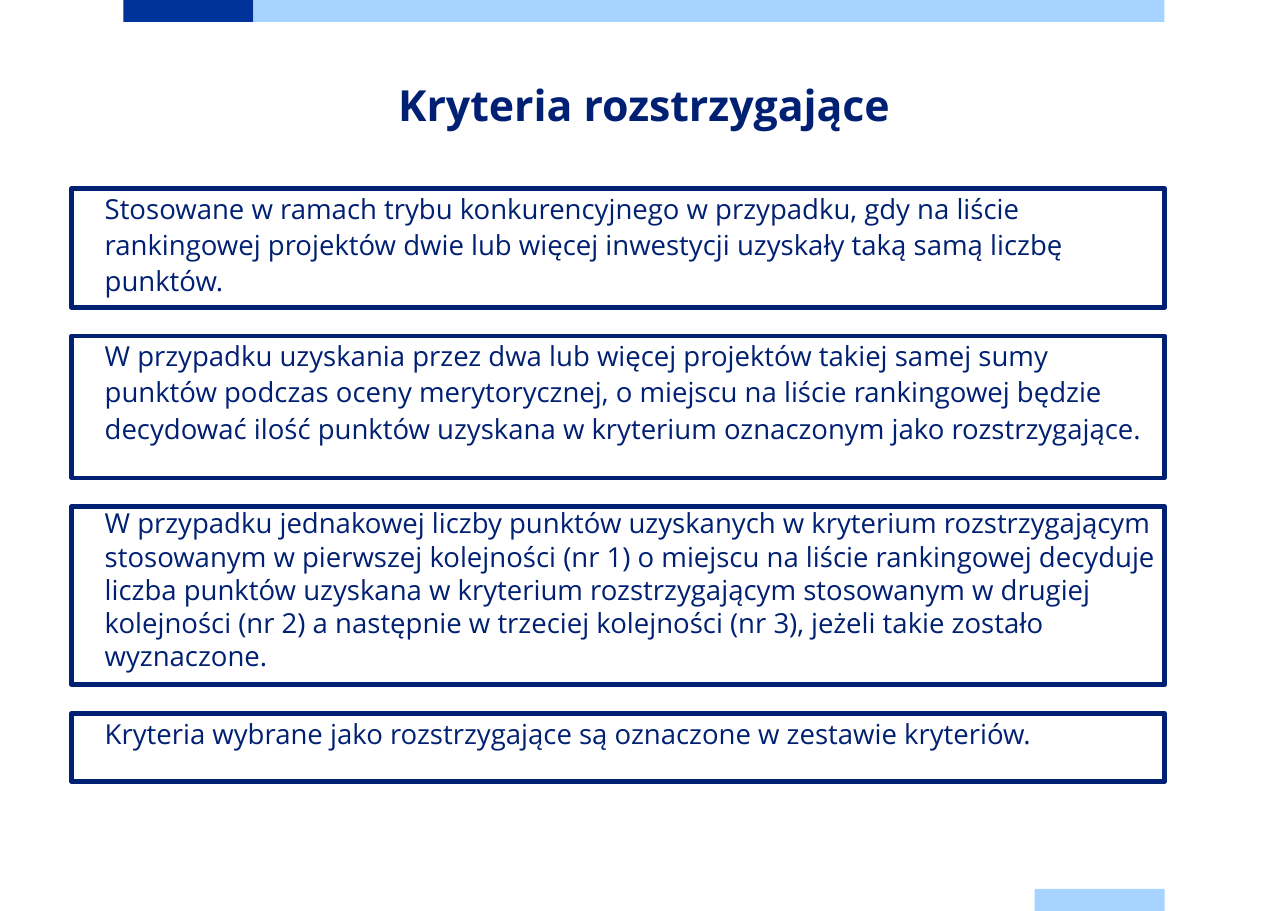
from dataclasses import dataclass

from lxml import etree
from pptx import Presentation
from pptx.dml.color import RGBColor
from pptx.enum.shapes import MSO_SHAPE
from pptx.enum.text import MSO_ANCHOR, MSO_AUTO_SIZE, PP_ALIGN
from pptx.oxml.ns import qn
from pptx.util import Pt

RECT = MSO_SHAPE.RECTANGLE
TOP = MSO_ANCHOR.TOP
NO_FIT = MSO_AUTO_SIZE.NONE
LEFT, CENTER = PP_ALIGN.LEFT, PP_ALIGN.CENTER

# Content: title, then each box as (height, line spacing, text)
TITLE = "Kryteria rozstrzygające"
BOXES = [
    (77.8, 1.1, "Stosowane w ramach trybu konkurencyjnego w przypadku, gdy na liście "
     "rankingowej projektów dwie lub więcej inwestycji uzyskały taką samą liczbę punktów."),
    (92.9, 1.1, "W przypadku uzyskania przez dwa lub więcej projektów takiej samej sumy "
     "punktów podczas oceny merytorycznej, o miejscu na liście rankingowej będzie "
     "decydować ilość punktów uzyskana w kryterium oznaczonym jako rozstrzygające."),
    (116.6, 1.0, "W przypadku jednakowej liczby punktów uzyskanych w kryterium "
     "rozstrzygającym stosowanym w pierwszej kolejności (nr 1) o miejscu na liście "
     "rankingowej decyduje liczba punktów uzyskana w kryterium rozstrzygającym "
     "stosowanym w drugiej kolejności (nr 2) a następnie w trzeciej kolejności (nr 3), "
     "jeżeli takie zostało wyznaczone."),
    (44.6, 1.1, "Kryteria wybrane jako rozstrzygające są oznaczone w zestawie kryteriów."),
]


@dataclass
class Theme:
    font: str = "Open Sans"
    navy: RGBColor = RGBColor(0x00, 0x20, 0x73)
    blue: RGBColor = RGBColor(0x00, 0x33, 0x99)
    sky: RGBColor = RGBColor(0xA6, 0xD3, 0xFF)
    title_size: int = 28
    body_size: int = 18
    border: int = 3


THEME = Theme()

# Layout in points
SLIDE_W, SLIDE_H = 841.68, 595.44
MARGIN, CONTENT_W = 80.64, 680.4
BAR_H, SHORT_BAR_W = 14.4, 85
BOX_LEFT, BOX_TOP, BOX_W, BOX_GAP = 46.8, 123.1, 714.3, 18.6
BOX_INDENT = 21.6


def place(sp, left, top, width, height):
    sp.left, sp.top, sp.width, sp.height = Pt(left), Pt(top), Pt(width), Pt(height)


def write(sp, text, size=THEME.body_size, bold=False, align=LEFT, spacing=1.0, indent=0):
    tf = sp.text_frame
    tf.word_wrap = True
    tf.auto_size = NO_FIT
    tf.vertical_anchor = TOP
    tf.margin_left = tf.margin_right = tf.margin_top = tf.margin_bottom = 0
    p = tf.paragraphs[0]
    p.alignment = align
    p.line_spacing = spacing
    p.space_before = Pt(0)
    pPr = p._p.get_or_add_pPr()
    pPr.set("marL", str(Pt(indent)))
    pPr.set("indent", "0")
    etree.SubElement(pPr, qn("a:buNone"))
    r = p.add_run()
    r.text = text
    r.font.name = THEME.font
    r.font.size = Pt(size)
    r.font.bold = bold
    r.font.color.rgb = THEME.navy


def add_rect(s):
    sp = s.shapes.add_shape(RECT, 0, 0, 0, 0)
    sp.shadow.inherit = False
    return sp


def main():
    prs = Presentation()
    prs.slide_width, prs.slide_height = Pt(SLIDE_W), Pt(SLIDE_H)
    s = prs.slides.add_slide(prs.slide_layouts[1])

    # Colour bars at the top and bottom edges
    right = MARGIN + CONTENT_W
    bars = [
        (MARGIN, 0, SHORT_BAR_W, THEME.blue),
        (MARGIN + SHORT_BAR_W, 0, CONTENT_W - SHORT_BAR_W, THEME.sky),
        (right - SHORT_BAR_W, SLIDE_H - BAR_H, SHORT_BAR_W, THEME.sky),
    ]
    for left, top, width, color in bars:
        bar = add_rect(s)
        place(bar, left, top, width, BAR_H)
        bar.fill.solid()
        bar.fill.fore_color.rgb = color
        bar.line.fill.background()

    # Title
    title = s.shapes.title
    place(title, MARGIN, 49, CONTENT_W, 45.4)
    write(title, TITLE, size=THEME.title_size, bold=True, align=CENTER, spacing=Pt(36))

    # Framed boxes, stacked with equal gaps; the first is the body placeholder
    top = BOX_TOP
    for i, (height, spacing, text) in enumerate(BOXES):
        box = add_rect(s) if i else s.placeholders[1]
        place(box, BOX_LEFT, top, BOX_W, height)
        box.fill.background()
        box.line.color.rgb = THEME.navy
        box.line.width = Pt(THEME.border)
        write(box, text, spacing=spacing, indent=BOX_INDENT)
        top += height + BOX_GAP

    prs.save("out.pptx")


if __name__ == "__main__":
    main()
